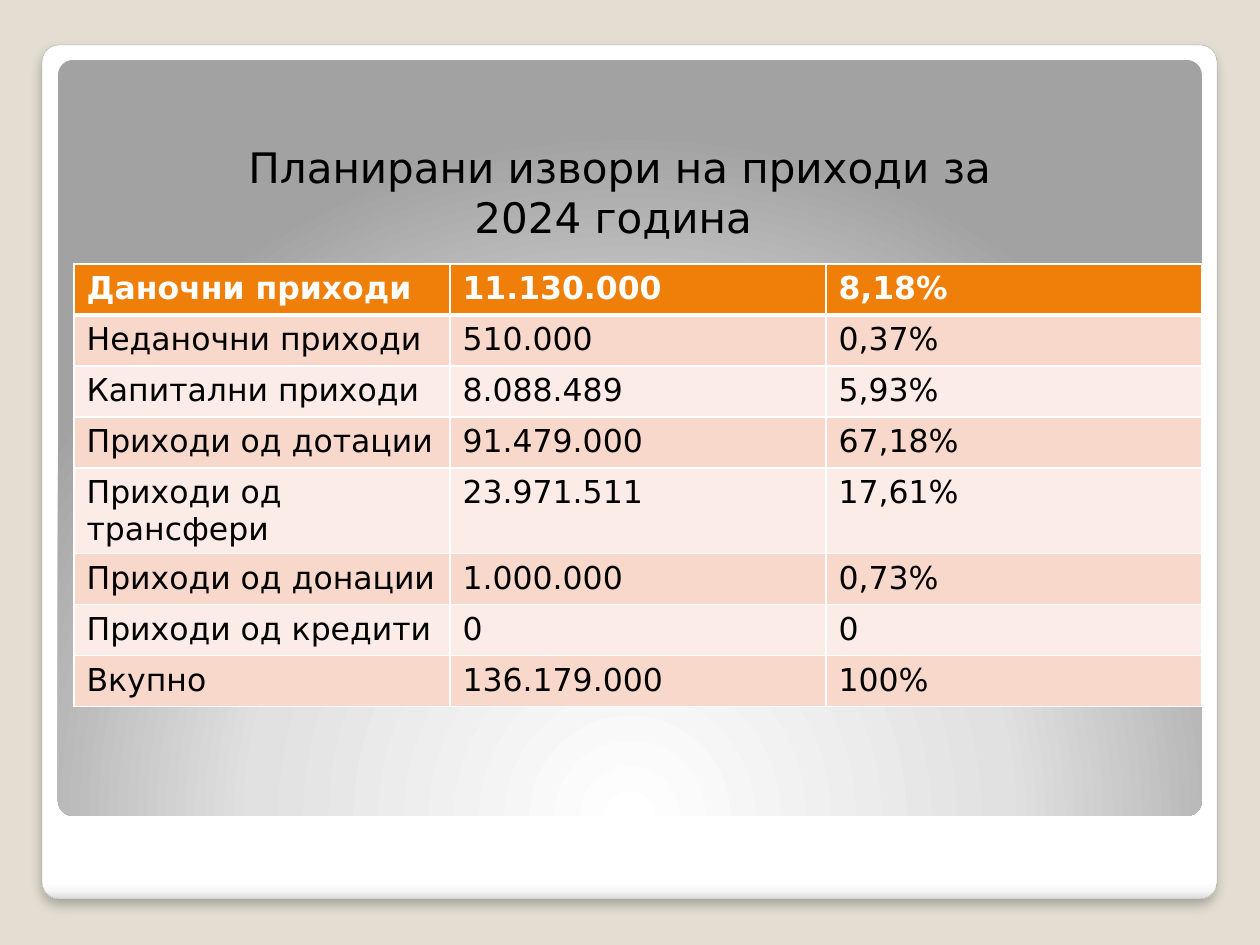
from dataclasses import dataclass

from lxml import etree
from pptx import Presentation, util as u
from pptx.dml.color import RGBColor
from pptx.enum import shapes, text
from pptx.oxml.ns import qn

PX = 914400 / 126
FONT = "DejaVu Sans"
SAND = RGBColor(0xE3, 0xDE, 0xD1)
GREY = RGBColor(0xA4, 0xA4, 0xA4)
ORANGE = RGBColor(0xF0, 0x7F, 0x09)
ROSE = RGBColor(0xF9, 0xD8, 0xCC)
BLUSH = RGBColor(0xFC, 0xEC, 0xE7)
WHITE = RGBColor(0xFF, 0xFF, 0xFF)
BLACK = RGBColor(0, 0, 0)

TITLE = "Планирани извори на приходи за 2024 година "
ROWS = [
    ("Даночни приходи", "11.130.000", "8,18%"),
    ("Неданочни приходи", "510.000", "0,37%"),
    ("Капитални приходи", "8.088.489", "5,93%"),
    ("Приходи од дотации", "91.479.000", "67,18%"),
    ("Приходи од трансфери", "23.971.511", "17,61%"),
    ("Приходи од донации", "1.000.000", "0,73%"),
    ("Приходи од кредити", "0", "0"),
    ("Вкупно", "136.179.000", "100%"),
]


@dataclass
class Box:
    left: int
    top: int
    width: int
    height: int

    def emu(self) -> list[int]:
        return [px(n) for n in (self.left, self.top, self.width, self.height)]


@dataclass
class Panel:
    box: Box
    stops: list[tuple[int, str]]
    radial: bool


PANELS = [
    Panel(Box(42, 45, 1175, 854),
          [(0, "FFFFFF"), (98, "FFFFFF"), (99, "F7F7F7"), (100, "DADADA")], False),
    Panel(Box(58, 60, 1144, 756),
          [(0, "FFFFFF"), (55, "E1E1E1"), (100, "A2A2A2")], True),
]
TITLE_BOX = Box(223, 135, 794, 115)
TABLE_BOX = Box(74, 264, 1128, 408)


def px(n: int) -> int:
    return round(n * PX)


def add(parent, tag: str, **attrs):
    """Append a DrawingML child, turning attribute values into strings."""
    return etree.SubElement(parent, qn("a:" + tag),
                            {key: str(val) for key, val in attrs.items()})


def shade(shape, panel: Panel) -> None:
    """Fill with the panel's stops, downwards or as rings from below."""
    shape.fill.gradient()
    grad = shape.element.spPr.find(qn("a:gradFill"))
    for child in list(grad):
        grad.remove(child)
    stops = add(grad, "gsLst")
    for pos, color in panel.stops:
        add(add(stops, "gs", pos=pos * 1000), "srgbClr", val=color)
    if panel.radial:
        way = add(grad, "path", path="circle")
        add(way, "fillToRect", l=50000, t=175000, r=50000, b=-75000)
    else:
        add(grad, "lin", ang=5400000, scaled=0)


def cast(shape) -> None:
    """Give the shape a soft shadow straight below."""
    effect = shape.element.spPr.find(qn("a:effectLst"))
    shadow = add(effect, "outerShdw", blurRad=u.Pt(6), dist=u.Pt(4),
                 dir=5400000, algn="t", rotWithShape=0)
    add(add(shadow, "srgbClr", val="000000"), "alpha", val=25000)


def draw_panel(slide, panel: Panel) -> None:
    shape = slide.shapes.add_shape(
        shapes.MSO_SHAPE.ROUNDED_RECTANGLE, *panel.box.emu())
    shape.adjustments[0] = 0.02
    shape.shadow.inherit = False
    shade(shape, panel)
    if panel.radial:
        shape.line.fill.background()
    else:
        shape.line.color.rgb = GREY
        shape.line.width = u.Pt(0.16)
        cast(shape)


def write(para, words: str, size: int, color: RGBColor, bold: bool = False) -> None:
    run = para.add_run()
    run.text = words
    font = run.font
    font.name, font.size, font.bold = FONT, u.Pt(size), bold
    font.color.rgb = color


def edge(cell, top: int, low: int) -> None:
    """Rule the cell in white; top and low are widths in points."""
    props = cell._tc.get_or_add_tcPr()
    sides = {"lnL": 1, "lnR": 1, "lnT": top, "lnB": low}
    for spot, (tag, width) in enumerate(sides.items()):
        line = add(props, tag, w=u.Pt(width))
        add(add(line, "solidFill"), "srgbClr", val=WHITE)
        props.insert(spot, line)


def draw_table(slide, box: Box) -> None:
    table = slide.shapes.add_table(len(ROWS), len(ROWS[0]), *box.emu()).table
    for col in table.columns:
        col.width = px(box.width // len(ROWS[0]))
    for row in table.rows:
        row.height = px(box.height // len(ROWS))
    for r, row in enumerate(ROWS):
        head = r == 0
        for c, words in enumerate(row):
            cell = table.cell(r, c)
            cell.fill.solid()
            cell.fill.fore_color.rgb = ORANGE if head else (BLUSH, ROSE)[r % 2]
            edge(cell, 3 if r == 1 else 1, 3 if head else 1)
            write(cell.text_frame.paragraphs[0], words, 18,
                  WHITE if head else BLACK, head)


def draw_title(slide, box: Box) -> None:
    frame = slide.shapes.add_textbox(*box.emu()).text_frame
    frame.word_wrap = True
    frame.auto_size = text.MSO_AUTO_SIZE.SHAPE_TO_FIT_TEXT
    para = frame.paragraphs[0]
    para.alignment = text.PP_ALIGN.CENTER
    write(para, TITLE, 24, BLACK)


def main() -> None:
    deck = Presentation()
    deck.slide_width, deck.slide_height = px(1260), px(945)
    slide = deck.slides.add_slide(deck.slide_layouts[6])
    back = slide.background.fill
    back.solid()
    back.fore_color.rgb = SAND
    for panel in PANELS:
        draw_panel(slide, panel)
    draw_table(slide, TABLE_BOX)
    draw_title(slide, TITLE_BOX)
    deck.save("out.pptx")


if __name__ == "__main__":
    main()
